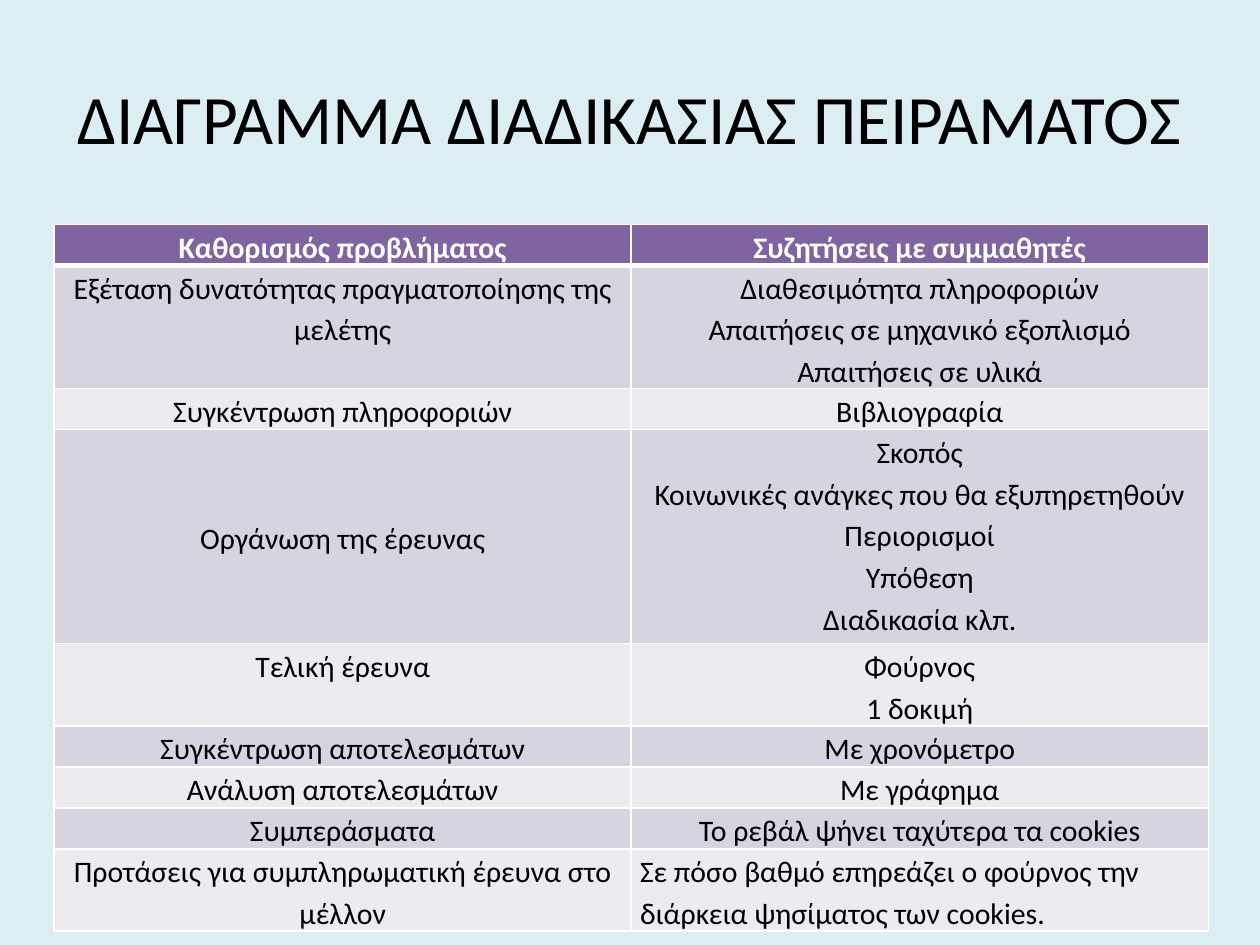
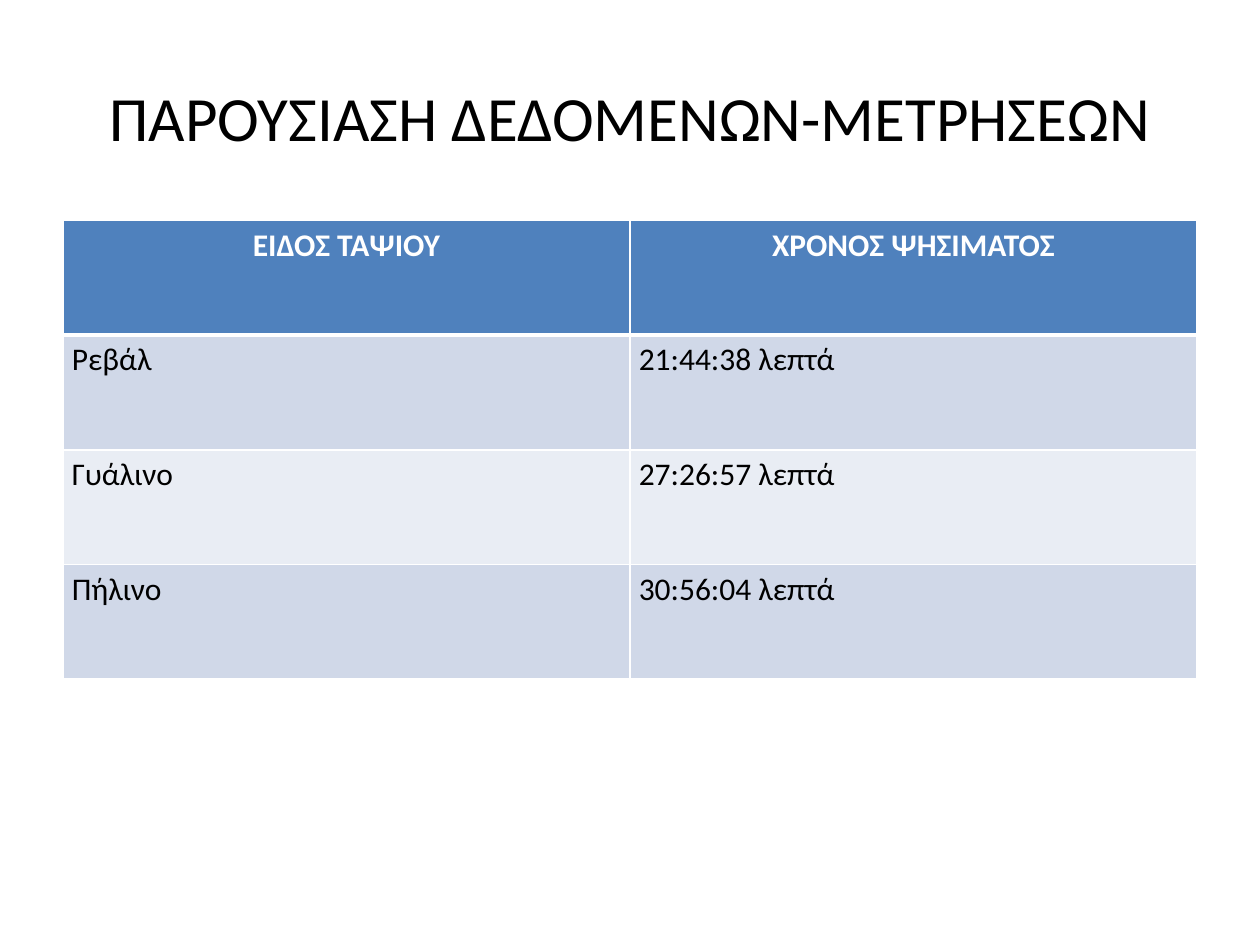
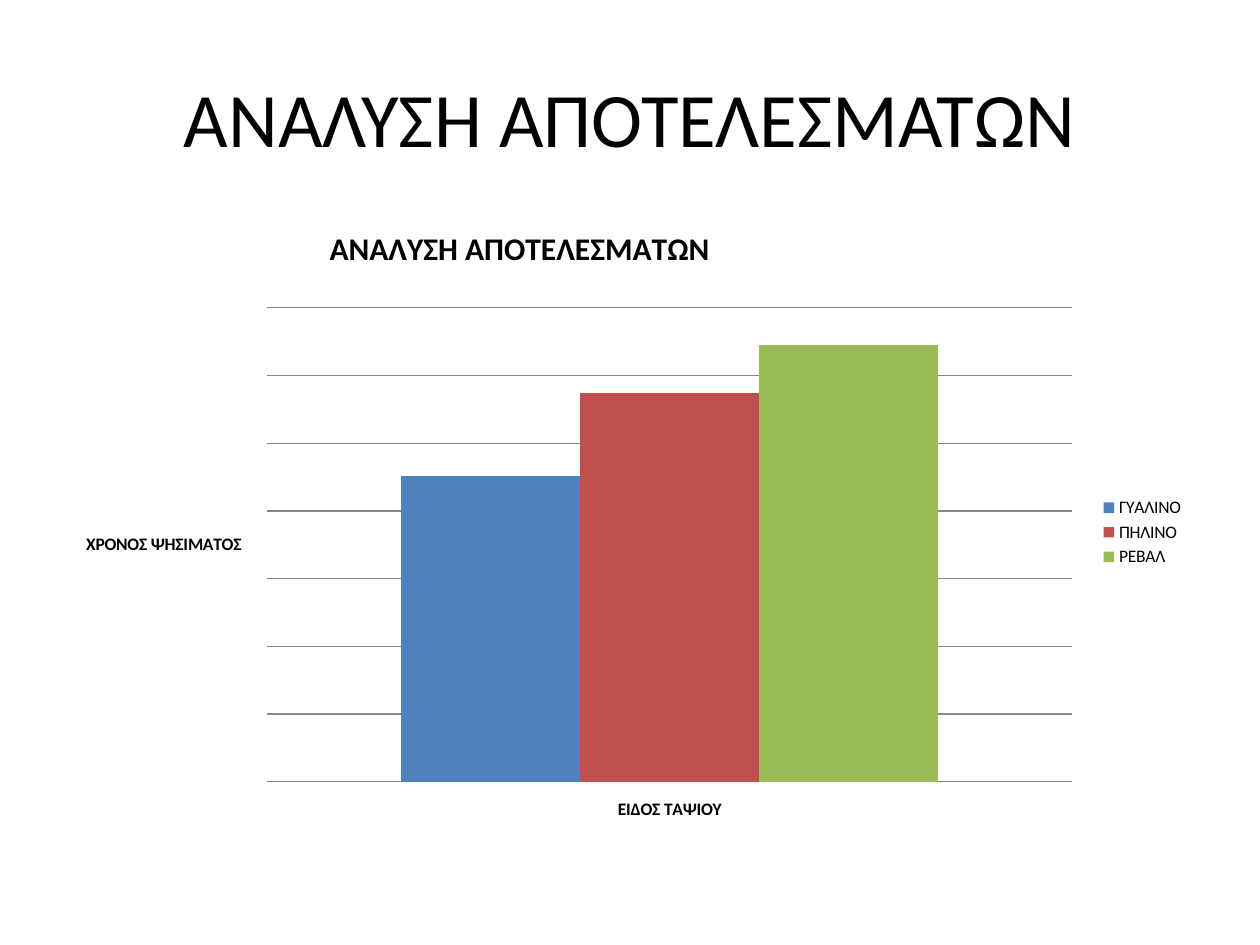
from lxml.etree import SubElement
from pptx import Presentation
from pptx.chart.data import CategoryChartData
from pptx.dml.color import RGBColor
from pptx.enum.chart import XL_CHART_TYPE, XL_LEGEND_POSITION, XL_TICK_LABEL_POSITION
from pptx.enum.text import MSO_ANCHOR, PP_ALIGN
from pptx.oxml import parse_xml
from pptx.oxml.ns import nsdecls, qn
from pptx.util import Inches, Pt

# Shared style
FONT = "Calibri"
LEFT, MID = PP_ALIGN.LEFT, PP_ALIGN.CENTER
HEX = {
    "ice": "DBEEF4", "white": "FFFFFF", "black": "000000", "grid": "868686",
    "plum": "8064A2", "plum1": "D8D3E0", "plum2": "EDEAF0",
    "blue": "4F81BD", "blue1": "D0D8E8", "blue2": "E9EDF4",
    "red": "C0504D", "green": "9BBB59",
}

# Content: each cell is text, one paragraph a line
STEPS = [
    ("Καθορισμός προβλήματος", "Συζητήσεις με συμμαθητές"),
    ("Εξέταση δυνατότητας πραγματοποίησης της μελέτης",
     "Διαθεσιμότητα πληροφοριών\nΑπαιτήσεις σε μηχανικό εξοπλισμό\nΑπαιτήσεις σε υλικά"),
    ("Συγκέντρωση πληροφοριών", "Βιβλιογραφία"),
    ("Οργάνωση της έρευνας",
     "Σκοπός\nΚοινωνικές ανάγκες που θα εξυπηρετηθούν\nΠεριορισμοί\nΥπόθεση\nΔιαδικασία κλπ."),
    ("Τελική έρευνα", "Φούρνος\n1 δοκιμή"),
    ("Συγκέντρωση αποτελεσμάτων", "Με χρονόμετρο"),
    ("Ανάλυση αποτελεσμάτων", "Με γράφημα"),
    ("Συμπεράσματα", "Το ρεβάλ ψήνει ταχύτερα τα cookies"),
    ("Προτάσεις για συμπληρωματική έρευνα στο μέλλον",
     "Σε πόσο βαθμό επηρεάζει ο φούρνος την διάρκεια ψησίματος των cookies."),
]
STEP_HIGH = [0.28, 0.85, 0.28, 1.7, 0.57, 0.28, 0.28, 0.28, 0.57]
TIMES = [
    ("ΕΙΔΟΣ ΤΑΨΙΟΥ", "ΧΡΟΝΟΣ ΨΗΣΙΜΑΤΟΣ"),
    ("Ρεβάλ", "21:44:38 λεπτά"),
    ("Γυάλινο", "27:26:57 λεπτά"),
    ("Πήλινο", "30:56:04 λεπτά"),
]
BARS = [("ΓΥΑΛΙΝΟ", 70, "blue"), ("ΠΗΛΙΝΟ", 89, "red"), ("ΡΕΒΑΛ", 100, "green")]


def tint(name):
    return RGBColor.from_string(HEX[name])


def write(frame, text, size=18, color="black", bold=False, align=MID, space=None):
    for i, line in enumerate(text.split("\n")):
        para = frame.add_paragraph() if i else frame.paragraphs[0]
        para.alignment = align
        para.line_spacing = space
        run = para.add_run()
        run.text = line
        font = run.font
        font.name, font.size, font.bold = FONT, Pt(size), bold
        font.color.rgb = tint(color)


def add_page(deck, title, size, back="white"):
    page = deck.slides.add_slide(deck.slide_layouts[6])
    page.background.fill.solid()
    page.background.fill.fore_color.rgb = tint(back)
    box = page.shapes.add_textbox(Inches(0.5), Inches(0.3), Inches(9), Inches(1.25))
    frame = box.text_frame
    frame.word_wrap = True
    frame.margin_left = frame.margin_right = 0
    frame.vertical_anchor = MSO_ANCHOR.MIDDLE
    write(frame, title, size=size)
    return page


def edge(cell, row):
    sides = {"L": 1, "R": 1, "T": 3 if row == 1 else 1, "B": 3 if row == 0 else 1}
    for side, width in sides.items():
        line = SubElement(cell._tc.get_or_add_tcPr(), qn(f"a:ln{side}"), w=str(Pt(width)))
        fill = SubElement(line, qn("a:solidFill"))
        SubElement(fill, qn("a:srgbClr"), val=HEX["white"])


def add_grid(page, rows, high, left, top, wide, hue, size, align):
    shape = page.shapes.add_table(len(rows), 2, Inches(left), Inches(top),
                                  Inches(wide), Inches(sum(high)))
    grid = shape.table
    for col in grid.columns:
        col.width = Inches(wide / 2)
    for r, texts in enumerate(rows):
        grid.rows[r].height = Inches(high[r])
        head = r == 0
        for c, text in enumerate(texts):
            cell = grid.cell(r, c)
            edge(cell, r)
            cell.fill.solid()
            cell.fill.fore_color.rgb = tint(hue if head else hue + "21"[r % 2])
            cell.margin_left = cell.margin_right = Inches(0.07)
            cell.margin_top = cell.margin_bottom = 0
            write(cell.text_frame, text, size=size, bold=head, space=1.15,
                  color="white" if head else "black", align=MID if head else align)
    return grid


def layout(**spots):
    parts = "".join(f'<c:{key} val="{val}"/>' for key, val in spots.items())
    return parse_xml(f'<c:layout {nsdecls("c")}><c:manualLayout>{parts}'
                     '</c:manualLayout></c:layout>')


def add_bars(page):
    data = CategoryChartData()
    data.categories = ["1"]
    for name, value, _ in BARS:
        data.add_series(name, [value])
    chart = page.shapes.add_chart(XL_CHART_TYPE.COLUMN_CLUSTERED, Inches(0.5), Inches(1.75),
                                  Inches(9), Inches(4.95), data).chart
    chart.font.name, chart.font.size = FONT, Pt(10)
    chart.font.color.rgb = tint("black")

    # Bars
    plot = chart.plots[0]
    plot.gap_width, plot.overlap, plot.vary_by_categories = 150, 0, False
    for bar, (_, _, hue) in zip(plot.series, BARS):
        bar.format.fill.solid()
        bar.format.fill.fore_color.rgb = tint(hue)

    # Titles, axes and legend
    chart.has_title = True
    write(chart.chart_title.text_frame, "ΑΝΑΛΥΣΗ ΑΠΟΤΕΛΕΣΜΑΤΩΝ", bold=True)
    cat, val = chart.category_axis, chart.value_axis
    for axis, text in zip((cat, val), TIMES[0]):
        axis.visible = False
        axis.tick_label_position = XL_TICK_LABEL_POSITION.NONE
        write(axis.axis_title.text_frame, text, size=10, bold=True)
    val.axis_title.text_frame._txBody.bodyPr.set("rot", "0")
    val.minimum_scale, val.maximum_scale, val.major_unit = 0, 108.5, 15.5
    val.tick_labels.number_format = "h:mm:ss"
    val.tick_labels.number_format_is_linked = False
    val.has_major_gridlines = True
    val.major_gridlines.format.line.color.rgb = tint("grid")
    val.major_gridlines.format.line.width = Pt(0.75)
    chart.has_legend = True
    chart.legend.position = XL_LEGEND_POSITION.RIGHT
    chart.legend.include_in_layout = False

    # Fixed places of the title and the plot
    head = chart.chart_title._element
    area = chart._chartSpace.chart.plotArea
    for node in (head, area):
        for old in node.findall(qn("c:layout")):
            node.remove(old)
    head.insert(1, layout(xMode="edge", yMode="edge", x=0.23, y=0))
    area.insert(0, layout(layoutTarget="inner", xMode="edge", yMode="edge",
                          x=0.18, y=0.14, w=0.71, h=0.76))


def main():
    deck = Presentation()
    deck.slide_width, deck.slide_height = Inches(10), Inches(7.5)

    # Steps of the experiment
    page = add_page(deck, "ΔΙΑΓΡΑΜΜΑ ΔΙΑΔΙΚΑΣΙΑΣ ΠΕΙΡΑΜΑΤΟΣ", 39.6, back="ice")
    grid = add_grid(page, STEPS, STEP_HIGH, 0.43, 1.78, 9.16, "plum", 17, MID)
    grid.cell(3, 0).vertical_anchor = MSO_ANCHOR.MIDDLE
    grid.cell(8, 1).text_frame.paragraphs[0].alignment = LEFT

    # Baking times
    page = add_page(deck, "ΠΑΡΟΥΣΙΑΣΗ ΔΕΔΟΜΕΝΩΝ-ΜΕΤΡΗΣΕΩΝ", 36)
    add_grid(page, TIMES, [0.91] * len(TIMES), 0.5, 1.75, 9, "blue", 18, LEFT)

    # Chart of the results
    add_bars(add_page(deck, "ΑΝΑΛΥΣΗ ΑΠΟΤΕΛΕΣΜΑΤΩΝ", 44))
    deck.save("out.pptx")


if __name__ == "__main__":
    main()
